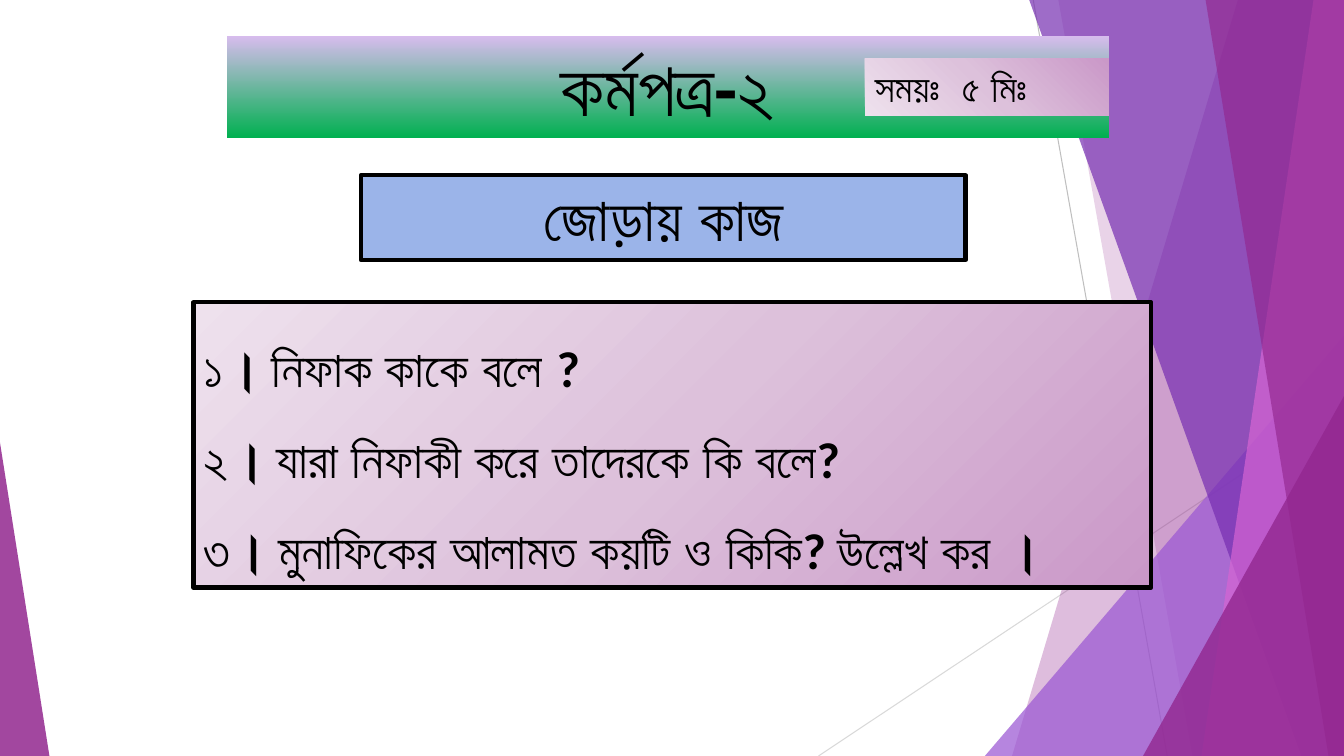
import pptx
import pptx.dml.color
import pptx.enum.shapes
import pptx.enum.text
import pptx.oxml
import pptx.oxml.ns
import pptx.util

SHAPE = pptx.enum.shapes.MSO_SHAPE
ALIGN = pptx.enum.text.PP_ALIGN
qn = pptx.oxml.ns.qn

BLACK = "000000"
PLUM = "92278F"
LILAC = [(0, "CA98C8"), (50, "DDC1DB"), (100, "EEE1ED")]
GREEN = [(0, "D7BCED"), (100, "00B050")]


def rgb(value):
    return pptx.dml.color.RGBColor.from_string(value)


class Deck:
    """Draws styled elements on the current slide, placed in percent of its size."""

    def __init__(self, width, height):
        self.prs = pptx.Presentation()
        self.prs.slide_width = pptx.util.Inches(width)
        self.prs.slide_height = pptx.util.Inches(height)
        self.s = self.prs.slides.add_slide(self.prs.slide_layouts[6])

    def x(self, share):
        return round(self.prs.slide_width * share / 100)

    def y(self, share):
        return round(self.prs.slide_height * share / 100)

    def tint(self, sp, color, opacity):
        sp.shadow.inherit = False
        sp.line.fill.background()
        sp.fill.solid()
        sp.fill.fore_color.rgb = rgb(color)
        clr = sp.fill._xPr.find(".//" + qn("a:srgbClr"))
        alpha = clr.makeelement(qn("a:alpha"), {"val": str(opacity * 1000)})
        clr.append(alpha)

    def line(self, x1, y1, x2, y2, color):
        ln = self.s.shapes.add_connector(
            pptx.enum.shapes.MSO_CONNECTOR.STRAIGHT,
            self.x(x1), self.y(y1), self.x(x2), self.y(y2))
        ln.line.color.rgb = rgb(color)
        ln.line.width = pptx.util.Pt(0.75)
        pr = ln._element.spPr
        pr.append(pr.makeelement(qn("a:effectLst"), {}))

    def band(self, top, bottom, color, opacity):
        fb = self.s.shapes.build_freeform(self.x(top), 0)
        corners = [(100, 0), (100, 100), (bottom, 100)]
        fb.add_line_segments([(self.x(x), self.y(y)) for x, y in corners])
        self.tint(fb.convert_to_shape(), color, opacity)

    def triangle(self, left, top, width, peak, color, opacity):
        sp = self.s.shapes.add_shape(
            SHAPE.ISOSCELES_TRIANGLE, self.x(left), self.y(top),
            self.x(width), self.y(100 - top))
        sp.adjustments[0] = peak
        self.tint(sp, color, opacity)

    def gradient(self, sp, stops, angle):
        sp.fill.gradient()
        grad = sp._element.spPr.find(qn("a:gradFill"))
        items = "".join(
            f'<a:gs pos="{pos * 1000}"><a:srgbClr val="{color}"/></a:gs>'
            for pos, color in stops)
        if angle is None:
            shade = '<a:path path="circle"><a:fillToRect l="100000" b="100000"/></a:path>'
        else:
            shade = f'<a:lin ang="{angle * 60000}" scaled="0"/>'
        ns = pptx.oxml.ns.nsdecls("a")
        new = pptx.oxml.parse_xml(
            f'<a:gradFill {ns} rotWithShape="1"><a:gsLst>{items}</a:gsLst>{shade}</a:gradFill>')
        grad[:] = list(new)

    def box(self, left, top, width, height, lines, size, font, fill,
            angle=None, border=False, align=ALIGN.LEFT, spacing=1.0):
        sp = self.s.shapes.add_shape(
            SHAPE.RECTANGLE, self.x(left), self.y(top), self.x(width), self.y(height))
        sp.shadow.inherit = False
        if isinstance(fill, str):
            sp.fill.solid()
            sp.fill.fore_color.rgb = rgb(fill)
        else:
            self.gradient(sp, fill, angle)
        if border:
            sp.line.color.rgb = rgb(BLACK)
            sp.line.width = pptx.util.Pt(3)
        else:
            sp.line.fill.background()
        tf = sp.text_frame
        tf.word_wrap = True
        tf.auto_size = pptx.enum.text.MSO_AUTO_SIZE.SHAPE_TO_FIT_TEXT
        tf.vertical_anchor = pptx.enum.text.MSO_ANCHOR.TOP
        tf.text = "\n".join(lines)
        for p in tf.paragraphs:
            p.alignment = align
            p.line_spacing = spacing
            p.font.name = font
            p.font.size = pptx.util.Pt(size)
            p.font.bold = True
            p.font.color.rgb = rgb(BLACK)


def main():
    deck = Deck(13.33, 7.5)
    deck.line(76.88, 0, 86.85, 100, "BFBFBF")
    deck.line(100, 53.73, 60.9, 100, "D9D9D9")
    deck.band(92.1, 75.3, PLUM, 30)
    deck.band(78.75, 88.73, PLUM, 20)
    deck.triangle(73.28, 44.4, 26.72, 1, "9B57D3", 72)
    deck.band(76.58, 96.83, "762EB1", 70)
    deck.band(97.73, 89.4, "D665D3", 70)
    deck.band(89.7, 98.85, PLUM, 65)
    deck.triangle(85.05, 52.4, 14.95, 1, PLUM, 80)
    deck.triangle(0, 58.53, 3.68, 0, PLUM, 85)

    deck.box(26.85, 23.2, 45, 11.2, ["জোড়ায় কাজ"], 44, "Roboto", "9BB4E9",
             border=True, align=ALIGN.CENTER)
    deck.box(16.88, 4.8, 65.63, 13.47, ["কর্মপত্র-২"], 54, "Calibri", GREEN,
             angle=90, align=ALIGN.CENTER)
    deck.box(64.35, 7.73, 18.15, 7.6, ["সময়ঃ  ৫ মিঃ"], 28, "Roboto", LILAC)
    questions = [
        "১। নিফাক কাকে বলে ?",
        "২। যারা নিফাকী করে তাদেরকে কি বলে?",
        "৩। মুনাফিকের আলামত কয়টি ও কিকি? উল্লেখ কর ।",
    ]
    deck.box(14.4, 40, 71.25, 37.73, questions, 36, "Calibri", LILAC,
             angle=225, border=True, spacing=1.5)
    deck.prs.save("out.pptx")


if __name__ == "__main__":
    main()
